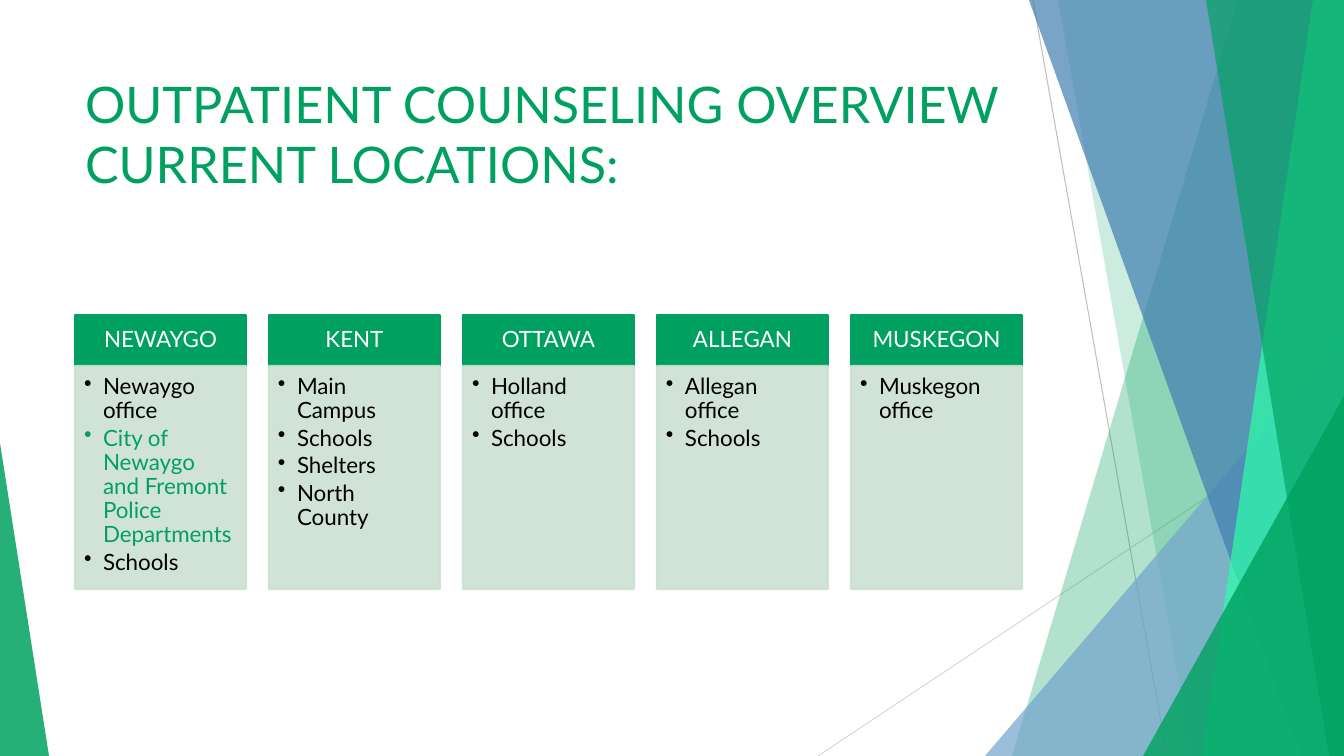
import pptx
import pptx.dml.color
import pptx.enum.shapes
import pptx.enum.text
import pptx.oxml.ns
import pptx.util
from lxml import etree

RGB = pptx.dml.color.RGBColor
SHAPE = pptx.enum.shapes.MSO_SHAPE
ALIGN = pptx.enum.text.PP_ALIGN
ANCHOR = pptx.enum.text.MSO_ANCHOR

GREEN = RGB(0x00, 0xA1, 0x60)
MINT = RGB(0x2E, 0xFF, 0xAA)
SKY = RGB(0x75, 0xA5, 0xCC)
BLUE = RGB(0x41, 0x7E, 0xB0)
SAGE = RGB(0xCC, 0xE0, 0xD2)
GREY = RGB(0xBF, 0xBF, 0xBF)
PALE_GREY = RGB(0xD9, 0xD9, 0xD9)
WHITE = RGB(0xFF, 0xFF, 0xFF)
BLACK = RGB(0x00, 0x00, 0x00)

FONT = "Lato"
SLIDE_W, SLIDE_H = 1344, 756
EMU_PER_PX = 914400 / 100.8

TITLE = ["OUTPATIENT COUNSELING OVERVIEW", "CURRENT LOCATIONS:"]
HIGHLIGHT = "City of Newaygo and Fremont Police Departments"
COUNTIES = {
    "NEWAYGO": ["Newaygo office", HIGHLIGHT, "Schools"],
    "KENT": ["Main Campus", "Schools", "Shelters", "North County"],
    "OTTAWA": ["Holland office", "Schools"],
    "ALLEGAN": ["Allegan office", "Schools"],
    "MUSKEGON": ["Muskegon office"],
}

# Start and end points, colour
RAYS = [
    ((1033, 0), (1167, 756), GREY),
    ((1344, 406), (818, 756), PALE_GREY),
]
# Bands run to the right edge: left x at the top, left x at the bottom.
# Triangles stand on the bottom edge: left, top, width, apex (0 left, 1 right).
FACETS = [
    ("band", (1238, 1012), GREEN, 30),
    ("band", (1058, 1192), GREEN, 20),
    ("triangle", (985, 336, 359, 1), SKY, 72),
    ("band", (1029, 1301), BLUE, 70),
    ("band", (1313, 1202), MINT, 70),
    ("band", (1206, 1329), GREEN, 65),
    ("triangle", (1143, 396, 201, 1), GREEN, 80),
    ("triangle", (0, 443, 49, 0), GREEN, 85),
]

CARD_LEFT, CARD_TOP, CARD_W, CARD_STEP = 75, 315, 171, 194
HEADER_H, BODY_H = 51, 223
BULLET_INDENT = 19


def px(length):
    return pptx.util.Emu(round(length * EMU_PER_PX))


def set_alpha(color_format_parent, percent):
    """Make every RGB colour below the given XML element see-through."""
    for color in color_format_parent.iter(pptx.oxml.ns.qn("a:srgbClr")):
        alpha = etree.SubElement(color, pptx.oxml.ns.qn("a:alpha"))
        alpha.set("val", str(percent * 1000))


def paint(shape, color, opacity=100, outline=False):
    shape.shadow.inherit = False
    shape.fill.solid()
    shape.fill.fore_color.rgb = color
    if outline:
        shape.line.color.rgb = color
        shape.line.width = pptx.util.Pt(1.5)
    else:
        shape.line.fill.background()
    if opacity < 100:
        set_alpha(shape.element.spPr, opacity)


def add_run(paragraph, text, size, color):
    run = paragraph.add_run()
    run.text = text
    run.font.name = FONT
    run.font.size = pptx.util.Pt(size)
    run.font.color.rgb = color


def set_frame(frame, anchor, insets):
    frame.word_wrap = True
    frame.auto_size = pptx.enum.text.MSO_AUTO_SIZE.NONE
    frame.vertical_anchor = anchor
    (frame.margin_left, frame.margin_top,
     frame.margin_right, frame.margin_bottom) = map(px, insets)


def add_ray(shapes, start, end, color):
    ray = shapes.add_connector(
        pptx.enum.shapes.MSO_CONNECTOR.STRAIGHT, *map(px, start + end))
    ray.line.color.rgb = color
    ray.line.width = pptx.util.Pt(0.75)
    etree.SubElement(ray.element.spPr, pptx.oxml.ns.qn("a:effectLst"))


def add_facet(shapes, kind, place, color, opacity):
    if kind == "band":
        top_x, bottom_x = place
        outline = shapes.build_freeform(top_x, 0, scale=EMU_PER_PX)
        outline.add_line_segments(
            [(SLIDE_W, 0), (SLIDE_W, SLIDE_H), (bottom_x, SLIDE_H)])
        facet = outline.convert_to_shape()
    else:
        left, top, width, apex = place
        facet = shapes.add_shape(
            SHAPE.ISOSCELES_TRIANGLE,
            *map(px, (left, top, width, SLIDE_H - top)))
        facet.adjustments[0] = apex
    paint(facet, color, opacity)


def fill_title(title):
    title.left, title.top, title.width, title.height = map(
        px, (75, 68, 947, 145))
    set_frame(title.text_frame, ANCHOR.TOP, (10, 5, 10, 5))
    paragraph = title.text_frame.paragraphs[0]
    paragraph.alignment = ALIGN.LEFT
    for number, line in enumerate(TITLE):
        if number:
            paragraph.add_line_break()
        add_run(paragraph, line, 36, GREEN)


def add_bullet(paragraph):
    properties = paragraph._p.get_or_add_pPr()
    properties.set("marL", str(px(BULLET_INDENT)))
    properties.set("indent", str(-px(BULLET_INDENT)))
    bullet = etree.SubElement(properties, pptx.oxml.ns.qn("a:buChar"))
    bullet.set("char", "•")


def add_county(shapes, left, county, sites):
    header = shapes.add_shape(
        SHAPE.RECTANGLE, *map(px, (left, CARD_TOP, CARD_W, HEADER_H)))
    paint(header, GREEN, outline=True)
    set_frame(header.text_frame, ANCHOR.MIDDLE, (12, 7, 12, 7))
    heading = header.text_frame.paragraphs[0]
    heading.alignment = ALIGN.CENTER
    heading.line_spacing = 0.9
    add_run(heading, county, 16, WHITE)

    body = shapes.add_shape(
        SHAPE.RECTANGLE,
        *map(px, (left, CARD_TOP + HEADER_H, CARD_W, BODY_H)))
    paint(body, SAGE, 90, outline=True)
    set_frame(body.text_frame, ANCHOR.TOP, (9, 9, 12, 14))
    for number, site in enumerate(sites):
        frame = body.text_frame
        item = frame.add_paragraph() if number else frame.paragraphs[0]
        item.alignment = ALIGN.LEFT
        item.line_spacing = 0.9
        item.space_after = pptx.util.Pt(2.4)
        add_bullet(item)
        add_run(item, site, 16, GREEN if site == HIGHLIGHT else BLACK)


def main():
    deck = pptx.Presentation()
    deck.slide_width, deck.slide_height = px(SLIDE_W), px(SLIDE_H)
    slide = deck.slides.add_slide(deck.slide_layouts.get_by_name("Title Only"))
    fill_title(slide.shapes.title)
    for ray in RAYS:
        add_ray(slide.shapes, *ray)
    for facet in FACETS:
        add_facet(slide.shapes, *facet)
    for column, (county, sites) in enumerate(COUNTIES.items()):
        add_county(slide.shapes, CARD_LEFT + column * CARD_STEP, county, sites)
    deck.save("out.pptx")


if __name__ == "__main__":
    main()
